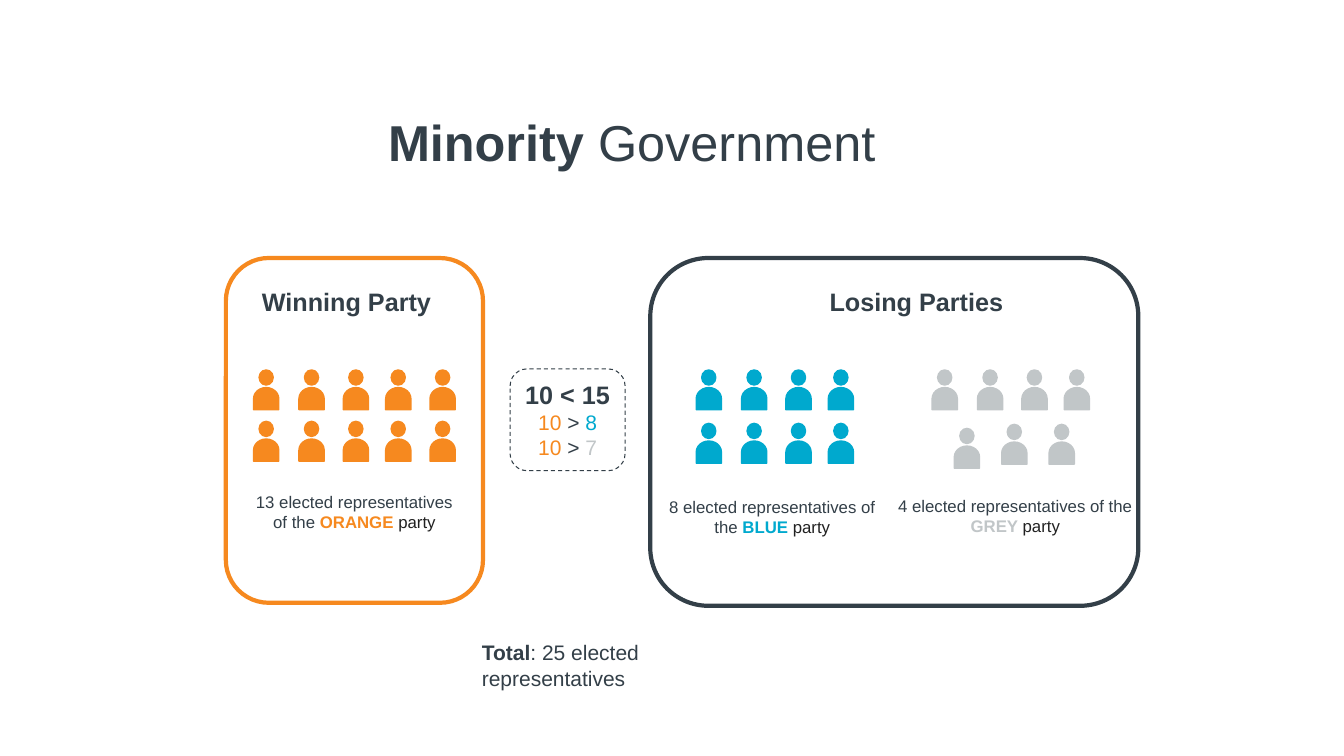
from dataclasses import dataclass

from pptx import Presentation
from pptx.dml.color import RGBColor
from pptx.enum.dml import MSO_LINE
from pptx.enum.shapes import MSO_SHAPE
from pptx.enum.text import MSO_ANCHOR, PP_ALIGN
from pptx.util import Inches, Pt

ROUNDED, OVAL, DELAY = (
    MSO_SHAPE.ROUNDED_RECTANGLE, MSO_SHAPE.OVAL, MSO_SHAPE.FLOWCHART_DELAY)
LEFT, CENTER = PP_ALIGN.LEFT, PP_ALIGN.CENTER
TOP, MIDDLE, BOTTOM = MSO_ANCHOR.TOP, MSO_ANCHOR.MIDDLE, MSO_ANCHOR.BOTTOM
DASH = MSO_LINE.DASH


@dataclass(frozen=True)
class Theme:
    font: str = "Arial"
    dark: str = "333F48"
    black: str = "212121"
    orange: str = "F6891F"
    blue: str = "00A9CE"
    grey: str = "C1C6C8"
    white: str = "FFFFFF"
    title: int = 36
    heading: int = 18
    body: int = 15
    caption: int = 12


THEME = Theme()

# A paragraph is (size, runs); a run is (text, colour, bold).
TITLE = [(THEME.title, [("Minority ", THEME.dark, True),
                        ("Government", THEME.dark, False)])]
TOTAL = [(THEME.body, [("Total", THEME.dark, True),
                       (": 25 elected representatives", THEME.dark, False)])]
WINNING = [(THEME.heading, [("Winning Party", THEME.dark, True)])]
LOSING = [(THEME.heading, [("Losing Parties", THEME.dark, True)])]


def party_runs(lead, name, color):
    return [(lead, THEME.dark, False), (name + " ", color, True),
            ("party", THEME.black, False)]


ORANGE_CAPTION = [(THEME.caption, party_runs(
    "13 elected representatives of the ", "ORANGE", THEME.orange))]
BLUE_CAPTION = [(THEME.caption, party_runs(
    "8 elected representatives of\vthe ", "BLUE", THEME.blue))]
GREY_CAPTION = [
    (THEME.caption, [("4 elected representatives of the", THEME.dark, False)]),
    (THEME.caption, party_runs("", "GREY", THEME.grey)[1:]),
]
COMPARISON = [(THEME.heading, [("10 < 15", THEME.dark, True)])] + [
    (THEME.body, [("10", THEME.orange, False), (" > ", THEME.dark, False),
                  (seats, color, False)])
    for seats, color in [("8", THEME.blue), ("7", THEME.grey)]
]

# left, top, width, height, anchor of the text, alignment, paragraphs
TEXT_BOXES = [
    (3.75, 1.05, 5.42, 0.7, LEFT, TITLE),
    (4.68, 6.3, 2.55, 0.61, LEFT, TOTAL),
    (2.5, 2.79, 1.97, 0.4, LEFT, WINNING),
    (8.13, 2.79, 1.94, 0.4, LEFT, LOSING),
    (5.16, 4.88, 5, 0.5, CENTER, BLUE_CAPTION),
    (7.57, 4.87, 5, 0.5, CENTER, GREY_CAPTION),
]

# Offsets of the heads from the first one of a party
COLUMNS = [0, 0.45, 0.89, 1.31, 1.75]
ORANGE_SEATS = [(x, y) for y in (0, 0.51) for x in COLUMNS]
BLUE_SEATS = [(x, y) for y in (0, 0.53) for x in COLUMNS[:4]]
GREY_SEATS = [(x, 0) for x in COLUMNS[:4]] + [
    (0.22, 0.58), (0.69, 0.54), (1.16, 0.54)]
PARTIES = [
    (2.57, THEME.orange, ORANGE_SEATS),
    (6.96, THEME.blue, BLUE_SEATS),
    (9.3, THEME.grey, GREY_SEATS),
]
SEATS_TOP = 3.67


def add_preset(shapes, kind, box, line, line_width, fill=None):
    shape = shapes.add_shape(kind, *map(Inches, box))
    shape.shadow.inherit = False
    if fill:
        shape.fill.solid()
        shape.fill.fore_color.rgb = RGBColor.from_string(fill)
    else:
        shape.fill.background()
    shape.line.color.rgb = RGBColor.from_string(line)
    shape.line.width = Pt(line_width)
    return shape


def write(frame, paragraphs, alignment, anchor=TOP):
    frame.word_wrap = True
    frame.vertical_anchor = anchor
    for index, (size, runs) in enumerate(paragraphs):
        paragraph = frame.paragraphs[0] if index == 0 else frame.add_paragraph()
        paragraph.alignment = alignment
        paragraph.font.name = THEME.font
        paragraph.font.size = Pt(size)
        for text, color, bold in runs:
            for part, line in enumerate(text.split("\v")):
                if part:
                    paragraph.add_line_break()
                run = paragraph.add_run()
                run.text = line
                run.font.bold = bold
                run.font.color.rgb = RGBColor.from_string(color)


def add_person(shapes, left, top, color):
    add_preset(shapes, OVAL, (left, top, 0.14, 0.15), color, 1, color)
    body = add_preset(shapes, DELAY, (left - 0.04, top + 0.16, 0.22, 0.25),
                      color, 1, color)
    body.rotation = 270


def main():
    presentation = Presentation()
    presentation.slide_width = Inches(13.33)
    presentation.slide_height = Inches(7.5)
    slide = presentation.slides.add_slide(presentation.slide_layouts[6])

    winning_card = add_preset(slide.shapes, ROUNDED, (2.24, 2.56, 2.55, 3.42),
                              THEME.orange, 3, THEME.white)
    winning_card.text_frame.margin_bottom = Inches(0.58)
    write(winning_card.text_frame, ORANGE_CAPTION, CENTER, BOTTOM)
    add_preset(slide.shapes, ROUNDED, (6.45, 2.56, 4.84, 3.45), THEME.dark, 3)

    for first_left, color, seats in PARTIES:
        group = slide.shapes.add_group_shape()
        for x, y in seats:
            add_person(group.shapes, first_left + x, SEATS_TOP + y, color)

    comparison = add_preset(slide.shapes, ROUNDED, (5.06, 3.66, 1.14, 1.01),
                            THEME.dark, 0.75)
    comparison.line.dash_style = DASH
    write(comparison.text_frame, COMPARISON, CENTER, MIDDLE)
    comparison.text_frame.word_wrap = False

    for left, top, width, height, alignment, paragraphs in TEXT_BOXES:
        box = slide.shapes.add_textbox(*map(Inches, (left, top, width, height)))
        write(box.text_frame, paragraphs, alignment)

    presentation.save("out.pptx")


if __name__ == "__main__":
    main()
